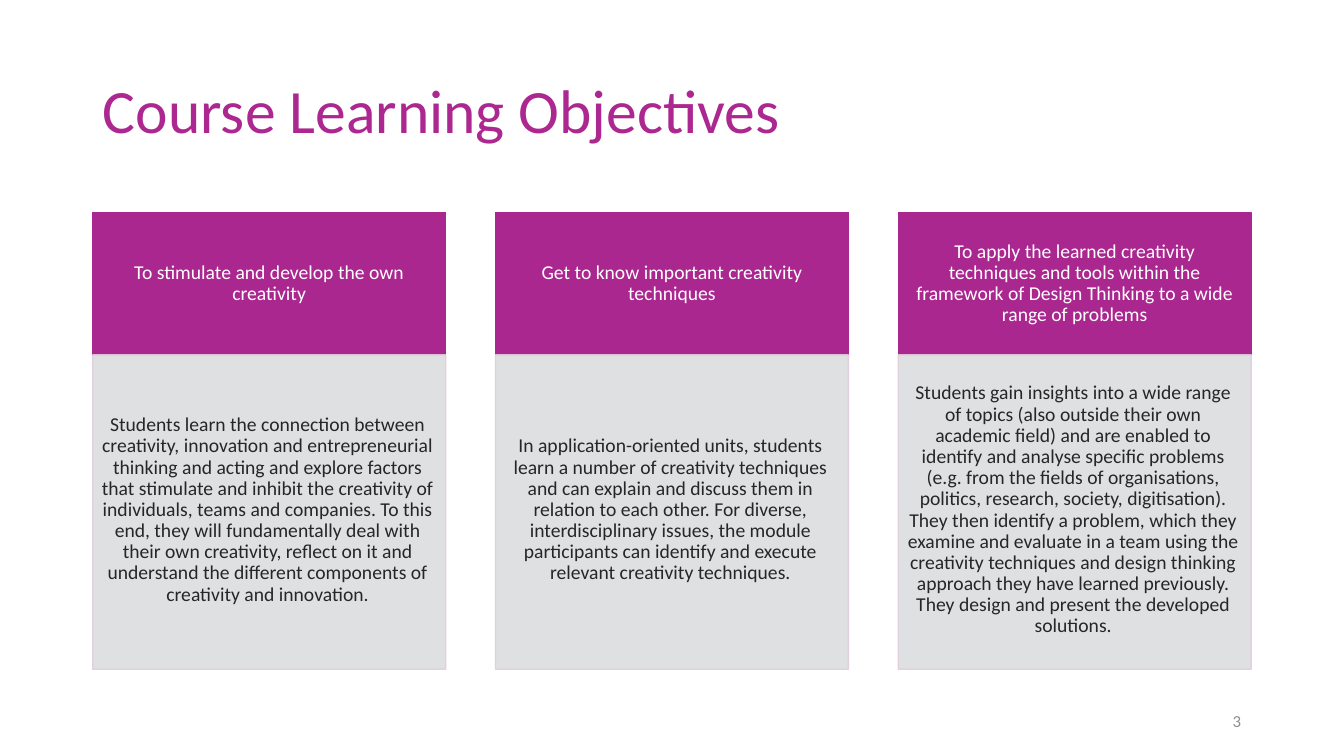
import pptx
import pptx.util
import pptx.dml.color
import pptx.enum.shapes
import pptx.enum.text
import pptx.oxml.ns
import lxml.etree

TITLE = "Course Learning Objectives"
PAGE_NUMBER = "3"
OBJECTIVES = [
    (
        "To stimulate and develop the own creativity",
        "Students learn the connection between creativity, innovation and entrepreneurial "
        "thinking and acting and explore factors that stimulate and inhibit the creativity of "
        "individuals, teams and companies. To this end, they will fundamentally deal with their "
        "own creativity, reflect on it and understand the different components of creativity "
        "and innovation.",
    ),
    (
        "Get to know important creativity techniques",
        "In application-oriented units, students learn a number of creativity techniques and can "
        "explain and discuss them in relation to each other. For diverse, interdisciplinary "
        "issues, the module participants can identify and execute relevant creativity techniques.",
    ),
    (
        "To apply the learned creativity techniques and tools within the framework of "
        "Design Thinking to a wide range of problems",
        "Students gain insights into a wide range of topics (also outside their own academic "
        "field) and are enabled to identify and analyse specific problems (e.g. from the fields "
        "of organisations, politics, research, society, digitisation). They then identify a "
        "problem, which they examine and evaluate in a team using the creativity techniques and "
        "design thinking approach they have learned previously. They design and present the "
        "developed solutions.",
    ),
]

WIDTH, HEIGHT = 13.33, 7.5
MARGIN = 0.92
COLUMN_WIDTH = 3.5
COLUMN_STEP = (WIDTH - 2 * MARGIN - COLUMN_WIDTH) / (len(OBJECTIVES) - 1)
GRID_TOP, HEADER_HEIGHT, BODY_HEIGHT = 2.11, 1.41, 3.12

ALIGN = pptx.enum.text.PP_ALIGN
HEADER = {"fill": "AB2790", "line": "AB2790", "opacity": 100,
          "insets": (0.11, 0.06, 0.11, 0.06), "color": "FFFFFF"}
BODY = {"fill": "DCDDDE", "line": "E2CDDB", "opacity": 90,
        "insets": (0.08, 0.08, 0.11, 0.12), "color": "262626"}


def rgb(value):
    return pptx.dml.color.RGBColor.from_string(value)


def place(shape, left, top, width, height):
    bounds = {"left": left, "top": top, "width": width, "height": height}
    for name, value in bounds.items():
        setattr(shape, name, pptx.util.Inches(value))


def write(shape, text, size, color, align, spacing=0.9, insets=(0.1, 0.05, 0.1, 0.05)):
    frame = shape.text_frame
    frame.word_wrap = True
    frame.auto_size = pptx.enum.text.MSO_AUTO_SIZE.NONE
    frame.vertical_anchor = pptx.enum.text.MSO_ANCHOR.MIDDLE
    for side, inset in zip(("left", "top", "right", "bottom"), insets):
        setattr(frame, "margin_" + side, pptx.util.Inches(inset))
    para = frame.paragraphs[0]
    para.alignment = align
    para.line_spacing = spacing
    span = para.add_run()
    span.text = text
    for name, value in {"name": "Calibri", "size": pptx.util.Pt(size)}.items():
        setattr(span.font, name, value)
    span.font.color.rgb = rgb(color)


def add_panel(page, left, top, height, text, style):
    panel = page.shapes.add_shape(pptx.enum.shapes.MSO_SHAPE.RECTANGLE, 0, 0, 0, 0)
    place(panel, left, top, COLUMN_WIDTH, height)
    panel.shadow.inherit = False
    panel.fill.solid()
    panel.fill.fore_color.rgb = rgb(style["fill"])
    panel.line.color.rgb = rgb(style["line"])
    panel.line.width = pptx.util.Pt(1)
    if style["opacity"] < 100:
        qn = pptx.oxml.ns.qn
        for color in panel.element.spPr.iter(qn("a:srgbClr")):
            alpha = lxml.etree.SubElement(color, qn("a:alpha"))
            alpha.set("val", str(style["opacity"] * 1000))
    write(panel, text, 14, style["color"], ALIGN.CENTER, insets=style["insets"])


def main():
    deck = pptx.Presentation()
    deck.slide_width = pptx.util.Inches(WIDTH)
    deck.slide_height = pptx.util.Inches(HEIGHT)
    page = deck.slides.add_slide(deck.slide_layouts[5])

    title = page.shapes.title
    place(title, MARGIN, 0.4, 9.21, 1.45)
    write(title, TITLE, 44, "AC2790", ALIGN.LEFT)

    for column, (heading, details) in enumerate(OBJECTIVES):
        left = MARGIN + column * COLUMN_STEP
        add_panel(page, left, GRID_TOP, HEADER_HEIGHT, heading, HEADER)
        add_panel(page, left, GRID_TOP + HEADER_HEIGHT, BODY_HEIGHT, details, BODY)

    number = page.shapes.add_textbox(0, 0, 0, 0)
    place(number, WIDTH - MARGIN - 3, 6.95, 3, 0.4)
    write(number, PAGE_NUMBER, 12, "8E8E8E", ALIGN.RIGHT, spacing=1.0)

    deck.save("out.pptx")


if __name__ == "__main__":
    main()
